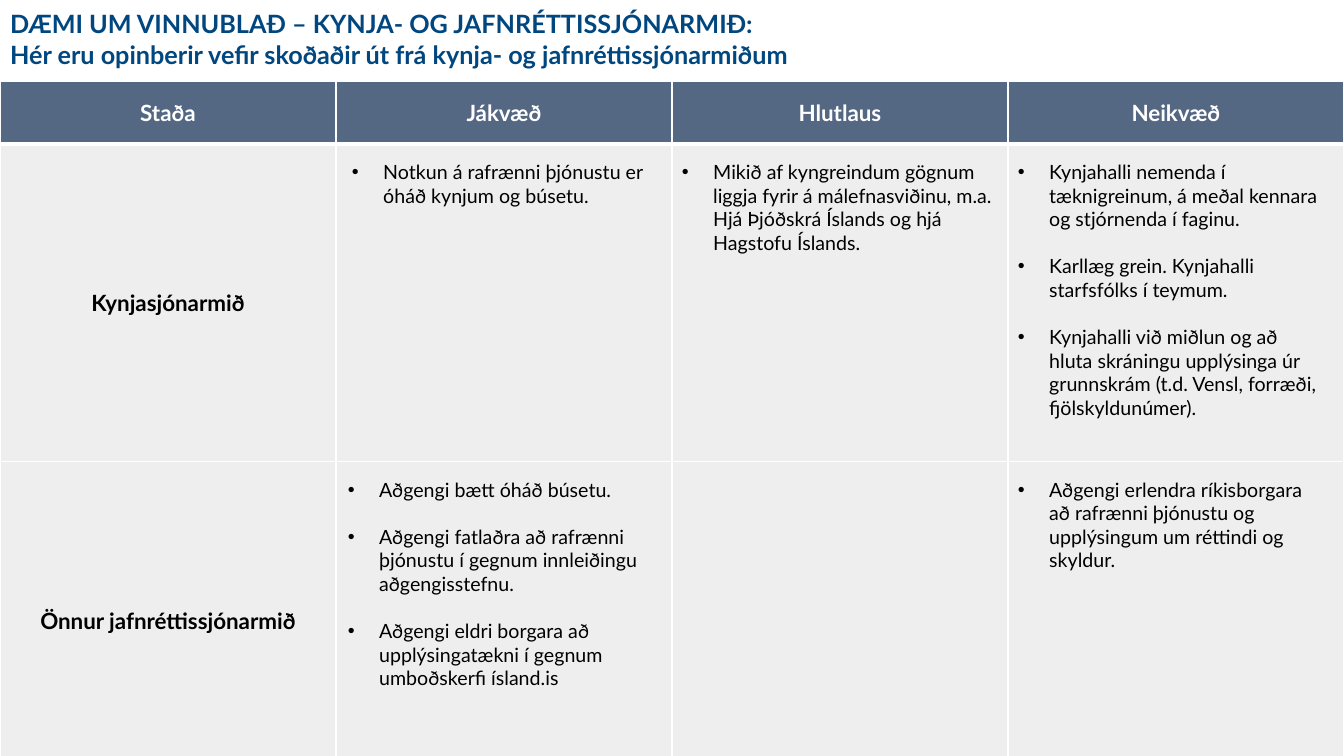
from lxml import etree
from pptx import Presentation
from pptx.dml.color import RGBColor
from pptx.enum.text import MSO_ANCHOR, MSO_AUTO_SIZE, PP_ALIGN
from pptx.oxml.ns import qn
from pptx.util import Inches, Pt

MIDDLE, TOP = MSO_ANCHOR.MIDDLE, MSO_ANCHOR.TOP
LEFT, CENTER = PP_ALIGN.LEFT, PP_ALIGN.CENTER
FIXED, GROW = MSO_AUTO_SIZE.NONE, MSO_AUTO_SIZE.SHAPE_TO_FIT_TEXT

NAVY = RGBColor(0x00, 0x46, 0x7F)
SLATE = RGBColor(0x54, 0x67, 0x83)
PALE = RGBColor(0xEE, 0xEE, 0xEE)
WHITE = RGBColor(0xFF, 0xFF, 0xFF)
BLACK = RGBColor(0x00, 0x00, 0x00)

SLIDE_WIDTH, SLIDE_HEIGHT = 13.33, 7.5
TABLE_TOP, HEADER_HEIGHT, ROW_HEIGHT = 0.81, 0.62, 3.15
LIST_GAP, LIST_INDENT = 0.11, 0.31

TITLE = ("DÆMI UM VINNUBLAÐ – KYNJA- OG JAFNRÉTTISSJÓNARMIÐ:\v"
         "Hér eru opinberir vefir skoðaðir út frá kynja- og jafnréttissjónarmiðum")
HEADERS = ["Staða", "Jákvæð", "Hlutlaus", "Neikvæð"]
VIEWPOINTS = ["Kynjasjónarmið", "Önnur jafnréttissjónarmið"]
# viewpoint row, column, shift from the column edge, width, height, items
LISTS = [
    (0, 1, 0.06, 3.22, 0.57, ["Notkun á rafrænni þjónustu er óháð kynjum og búsetu."]),
    (0, 2, 0, 3.28, 1.04, [
        "Mikið af kyngreindum gögnum liggja fyrir á málefnasviðinu, m.a. "
        "Hjá Þjóðskrá Íslands og hjá Hagstofu Íslands."]),
    (0, 3, 0, 3.22, 2.93, [
        "Kynjahalli nemenda í tæknigreinum, á meðal kennara og stjórnenda í faginu.",
        "Karllæg grein. Kynjahalli starfsfólks í teymum.",
        "Kynjahalli við miðlun og að hluta skráningu upplýsinga úr grunnskrám "
        "(t.d. Vensl, forræði, fjölskyldunúmer)."]),
    (1, 1, 0.02, 3.26, 2.22, [
        "Aðgengi bætt óháð búsetu.",
        "Aðgengi fatlaðra að rafrænni þjónustu í gegnum innleiðingu aðgengisstefnu.",
        "Aðgengi eldri borgara að upplýsingatækni í gegnum umboðskerfi ísland.is"]),
    (1, 3, 0, 3.22, 1.04, [
        "Aðgengi erlendra ríkisborgara að rafrænni þjónustu og upplýsingum "
        "um réttindi og skyldur."]),
]


def set_all(target, values):
    for name, value in values.items():
        setattr(target, name, value)


class Worksheet:
    """Holds the slide, its font and the grid that table and lists share."""

    font_name = "Lato"
    column_width = SLIDE_WIDTH / len(HEADERS)

    def __init__(self, presentation):
        self.slide = presentation.slides.add_slide(presentation.slide_layouts[5])

    def format_text(self, paragraph, size, color, bold, **values):
        set_all(paragraph, values)
        set_all(paragraph.font, {"name": self.font_name, "size": Pt(size), "bold": bold})
        paragraph.font.color.rgb = color

    def title(self, text):
        title = self.slide.shapes.title
        set_all(title, {"left": 0, "top": Inches(0.02 * SLIDE_HEIGHT),
                        "width": Inches(SLIDE_WIDTH), "height": Inches(0.47)})
        title.text_frame.text = text
        set_all(title.text_frame, {"auto_size": FIXED, "word_wrap": True,
                                   "vertical_anchor": MIDDLE})
        self.format_text(title.text_frame.paragraphs[0], 18, NAVY, True,
                         alignment=LEFT, line_spacing=1.0)

    def table(self, headers, row_labels):
        frame = self.slide.shapes.add_table(
            len(row_labels) + 1, len(headers), 0, Inches(TABLE_TOP), Inches(SLIDE_WIDTH),
            Inches(HEADER_HEIGHT + ROW_HEIGHT * len(row_labels)))
        table = frame.table
        for column in table.columns:
            column.width = Inches(self.column_width)
        blanks = [""] * (len(headers) - 1)
        rows = [headers] + [[label] + blanks for label in row_labels]
        for row_index, texts in enumerate(rows):
            is_header = row_index == 0
            table.rows[row_index].height = Inches(HEADER_HEIGHT if is_header else ROW_HEIGHT)
            for column_index, text in enumerate(texts):
                self.cell(table.cell(row_index, column_index), text, is_header, row_index == 1)

    def cell(self, cell, text, is_header, below_header):
        cell.fill.solid()
        cell.fill.fore_color.rgb = SLATE if is_header else PALE
        set_all(cell, {"vertical_anchor": MIDDLE,
                       "margin_left": Inches(0.07), "margin_right": Inches(0.07),
                       "margin_top": Inches(0.04), "margin_bottom": Inches(0.04)})
        self.borders(cell, {"L": 1, "R": 1, "T": 3 if below_header else 1,
                            "B": 3 if is_header else 1})
        if text:
            cell.text = text
            self.format_text(cell.text_frame.paragraphs[0], 16,
                             WHITE if is_header else BLACK, True, alignment=CENTER)

    def borders(self, cell, widths):
        """Draw white edges; they must stand before the fill in the cell properties."""
        properties = cell._tc.get_or_add_tcPr()
        for position, (side, width) in enumerate(widths.items()):
            line = etree.Element(qn(f"a:ln{side}"), w=str(Pt(width)))
            fill = etree.SubElement(line, qn("a:solidFill"))
            etree.SubElement(fill, qn("a:srgbClr"), val=str(WHITE))
            properties.insert(position, line)

    def bullet_list(self, row, column, shift, width, height, items):
        top = TABLE_TOP + HEADER_HEIGHT + row * ROW_HEIGHT + LIST_GAP
        box = self.slide.shapes.add_textbox(
            Inches(column * self.column_width + shift), Inches(top),
            Inches(width), Inches(height))
        text_frame = box.text_frame
        set_all(text_frame, {"word_wrap": True, "auto_size": GROW, "vertical_anchor": TOP})
        for index, item in enumerate(items):
            paragraph = text_frame.add_paragraph() if index else text_frame.paragraphs[0]
            paragraph.text = item
            properties = paragraph._p.get_or_add_pPr()
            properties.set("marL", str(Inches(LIST_INDENT)))
            properties.set("indent", str(-Inches(LIST_INDENT)))
            etree.SubElement(properties, qn("a:buFont"), typeface="Arial")
            etree.SubElement(properties, qn("a:buChar"), char="•")
            self.format_text(paragraph, 14, BLACK, False, alignment=LEFT,
                             space_before=Pt(16.8 if index else 0))


def main():
    presentation = Presentation()
    set_all(presentation, {"slide_width": Inches(SLIDE_WIDTH),
                           "slide_height": Inches(SLIDE_HEIGHT)})
    worksheet = Worksheet(presentation)
    worksheet.title(TITLE)
    worksheet.table(HEADERS, VIEWPOINTS)
    for entry in LISTS:
        worksheet.bullet_list(*entry)
    presentation.save("out.pptx")


if __name__ == "__main__":
    main()
